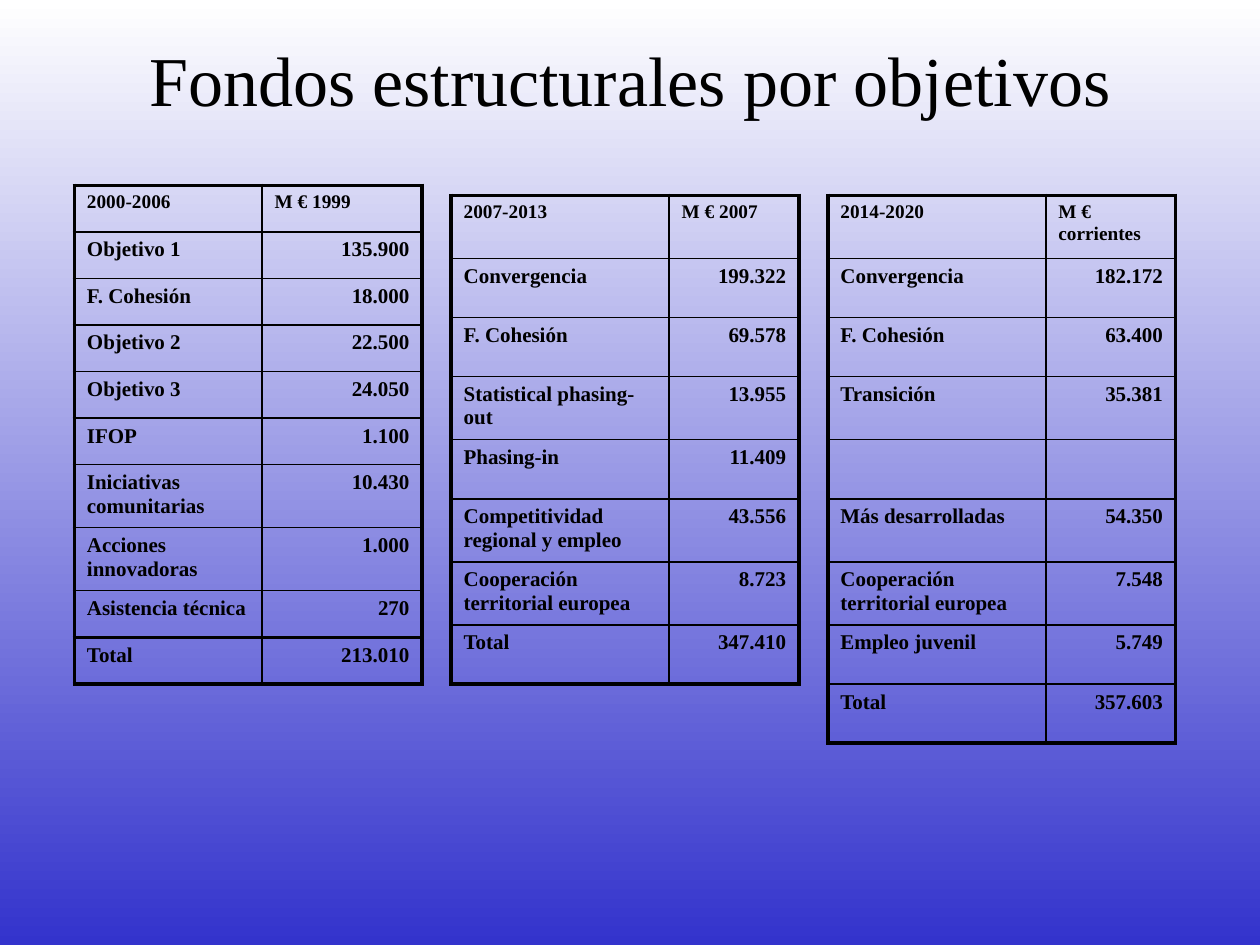
from lxml.etree import SubElement
from pptx import Presentation
from pptx.dml.color import RGBColor
from pptx.enum.text import MSO_ANCHOR, PP_ALIGN
from pptx.oxml.ns import qn
from pptx.util import Inches, Pt

BLACK = RGBColor(0x00, 0x00, 0x00)
WHITE = RGBColor(0xFF, 0xFF, 0xFF)
BLUE = RGBColor(0x33, 0x33, 0xCC)
FONT = "Times New Roman"
THIN, THICK = 1, 2.25

# Table grid, in inches
LEFT, STEP, WIDTH = 0.59, 2.99, 2.76
TALL = 0.5

OLD = [
    ("2000-2006", "M € 1999"),
    ("Objetivo 1", "135.900"),
    ("F. Cohesión", "18.000"),
    ("Objetivo 2", "22.500"),
    ("Objetivo 3", "24.050"),
    ("IFOP", "1.100"),
    ("Iniciativas comunitarias", "10.430"),
    ("Acciones innovadoras", "1.000"),
    ("Asistencia técnica", "270"),
    ("Total", "213.010"),
]
MID = [
    ("2007-2013", "M € 2007"),
    ("Convergencia", "199.322"),
    ("F. Cohesión", "69.578"),
    ("Statistical phasing-out", "13.955"),
    ("Phasing-in", "11.409"),
    ("Competitividad regional y empleo", "43.556"),
    ("Cooperación territorial europea", "8.723"),
    ("Total", "347.410"),
]
NEW = [
    ("2014-2020", "M € corrientes"),
    ("Convergencia", "182.172"),
    ("F. Cohesión", "63.400"),
    ("Transición", "35.381"),
    ("", ""),
    ("Más desarrolladas", "54.350"),
    ("Cooperación territorial europea", "7.548"),
    ("Empleo juvenil", "5.749"),
    ("Total", "357.603"),
]

# Rows, top, first column, row height, tall rows, thick line above the total
TABLES = [
    (OLD, 1.47, 1.49, 0.37, {6, 7}, True),
    (MID, 1.55, 1.73, 0.47, {0, 3, 5, 6}, False),
    (NEW, 1.55, 1.73, 0.47, {0, 3, 5, 6}, False),
]


def add_run(para, text, size, bold=False):
    run = para.add_run()
    run.text = text
    font = run.font
    font.name, font.size, font.bold = FONT, Pt(size), bold
    font.color.rgb = BLACK


def paint_back(slide):
    fill = slide.background.fill
    fill.gradient()
    fill.gradient_angle = 270
    for stop, color, place in zip(fill.gradient_stops, (WHITE, BLUE), (0, 1)):
        stop.color.rgb = color
        stop.position = place


def add_title(slide, text):
    title = slide.shapes.title
    title.left, title.top = Inches(0.75), 0
    title.width, title.height = Inches(8.5), Inches(1.25)
    frame = title.text_frame
    frame.vertical_anchor = MSO_ANCHOR.MIDDLE
    para = frame.paragraphs[0]
    para.alignment = PP_ALIGN.CENTER
    add_run(para, text, 40)


def set_lines(cell, thick):
    """Draw the four cell borders; sides named in thick are heavy."""
    props = cell._tc.get_or_add_tcPr()
    for side in "LRTB":
        width = THICK if side in thick else THIN
        line = SubElement(props, qn(f"a:ln{side}"), w=str(Pt(width)))
        fill = SubElement(line, qn("a:solidFill"))
        SubElement(fill, qn("a:srgbClr"), val=str(BLACK))


def fill_cell(cell, text, head, value):
    cell.fill.background()
    if not text:
        return
    para = cell.text_frame.paragraphs[0]
    para.alignment = PP_ALIGN.RIGHT if value and not head else PP_ALIGN.LEFT
    space = SubElement(para._p.get_or_add_pPr(), qn("a:spcBef"))
    SubElement(space, qn("a:spcPct"), val="20000")
    add_run(para, text, 11 if head else 12, bold=True)


def add_funds(slide, left, rows, top, first, low, tall, rule):
    highs = [TALL if r in tall else low for r in range(len(rows))]
    table = slide.shapes.add_table(
        len(rows), 2, Inches(left), Inches(top),
        Inches(WIDTH), Inches(sum(highs))).table
    table.first_row = table.horz_banding = False
    for col, width in zip(table.columns, (first, WIDTH - first)):
        col.width = Inches(width)
    last = len(rows) - 1
    for r, (pair, high) in enumerate(zip(rows, highs)):
        table.rows[r].height = Inches(high)
        edge = "T" if r == 0 or (rule and r == last) else ""
        edge += "B" if r == last or (rule and r == last - 1) else ""
        for c, text in enumerate(pair):
            cell = table.cell(r, c)
            set_lines(cell, edge + "LR"[c])
            fill_cell(cell, text, r == 0, c == 1)


def main():
    deck = Presentation()
    deck.slide_width, deck.slide_height = Inches(10), Inches(7.5)
    slide = deck.slides.add_slide(deck.slide_layouts[5])

    # Background and title
    paint_back(slide)
    add_title(slide, "Fondos estructurales por objetivos")

    # One table for each funding period
    for i, table in enumerate(TABLES):
        add_funds(slide, LEFT + i * STEP, *table)

    deck.save("out.pptx")


if __name__ == "__main__":
    main()
